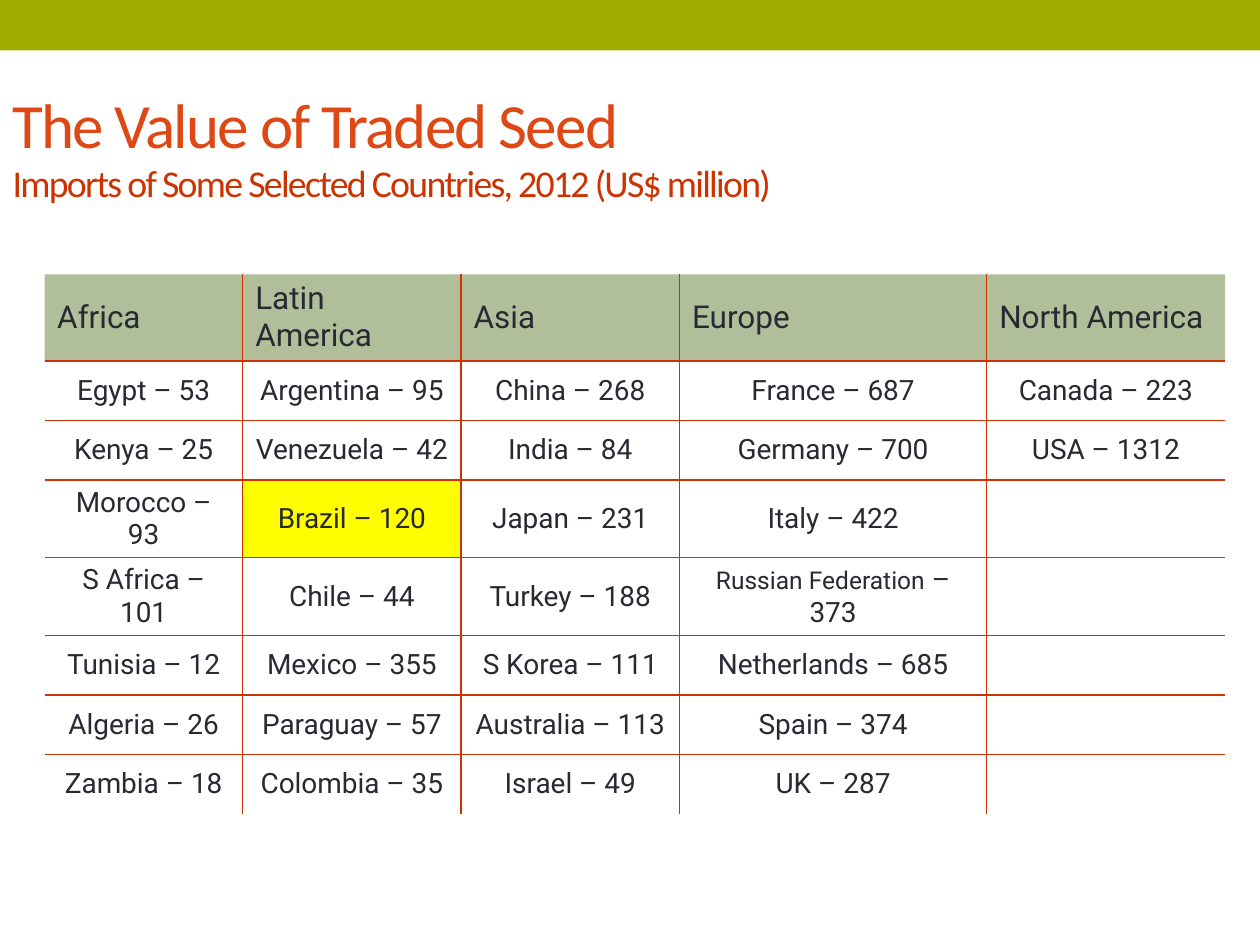
from lxml.etree import SubElement
from pptx import Presentation
from pptx.dml.color import RGBColor
from pptx.enum.shapes import MSO_SHAPE as Shape
from pptx.enum.text import MSO_ANCHOR as Anchor, MSO_AUTO_SIZE as AutoSize, PP_ALIGN as Align
from pptx.oxml.ns import qn
from pptx.util import Pt

HEADINGS = ["Africa", "Latin America", "Asia", "Europe", "North America"]
IMPORTS = [
    ["Egypt – 53", "Argentina – 95", "China – 268", "France – 687", "Canada – 223"],
    ["Kenya – 25", "Venezuela – 42", "India – 84", "Germany – 700", "USA – 1312"],
    ["Morocco – 93", "Brazil – 120", "Japan – 231", "Italy – 422", ""],
    ["S Africa – 101", "Chile – 44", "Turkey – 188", "Russian Federation – 373", ""],
    ["Tunisia – 12", "Mexico – 355", "S Korea – 111", "Netherlands – 685", ""],
    ["Algeria – 26", "Paraguay – 57", "Australia – 113", "Spain – 374", ""],
    ["Zambia – 18", "Colombia – 35", "Israel – 49", "UK – 287", ""],
]
COLUMN_WIDTHS = [113.2, 124.8, 124.8, 175.6, 136.2]
HEADER_HEIGHT, ROW_HEIGHT = 28.8, 34


def rgb(value):
    return RGBColor.from_string(value)


class SeedSlide:
    band, title, rule, ink = "A2AD00", "DD4814", "CC3300", "292934"
    header, highlight = "637F35", "FFFF00"
    title_font, table_font = "Calibri", "Roboto"

    def __init__(self, slide):
        self.slide = slide

    def add_run(self, paragraph, text, font, size, color):
        run = paragraph.add_run()
        run.text = text
        run.font.name, run.font.size = font, Pt(size)
        run.font.color.rgb = rgb(color)
        return run

    def add_band(self, width, height):
        band = self.slide.shapes.add_shape(Shape.RECTANGLE, 0, 0, Pt(width), Pt(height))
        band.shadow.inherit = False
        band.fill.solid()
        band.fill.fore_color.rgb = rgb(self.band)
        band.line.fill.background()

    def add_title(self, heading, subheading):
        holder = self.slide.shapes.title
        holder.left, holder.top = Pt(0), Pt(45.4)
        holder.width, holder.height = Pt(720), Pt(79.2)
        frame = holder.text_frame
        frame.auto_size, frame.word_wrap = AutoSize.NONE, True
        frame.vertical_anchor = Anchor.MIDDLE
        paragraph = frame.paragraphs[0]
        paragraph.alignment, paragraph.line_spacing = Align.LEFT, 0.95
        top = self.add_run(paragraph, heading, self.title_font, 36, self.title)
        paragraph.add_line_break()
        below = self.add_run(paragraph, subheading, self.title_font, 21.6, self.rule)
        for run in (top, below):
            run.font._element.set("spc", "-100")

    def set_borders(self, cell, edges):
        """Rule the sides named in edges (L, R, T, B) and clear the others."""
        properties = cell._tc.get_or_add_tcPr()
        for side in "LRTB":
            line = SubElement(properties, qn(f"a:ln{side}"), w=str(Pt(1)))
            if side in edges:
                fill = SubElement(line, qn("a:solidFill"))
                SubElement(fill, qn("a:srgbClr"), val=self.rule)
            else:
                SubElement(line, qn("a:noFill"))

    def fill_cell(self, cell, color=None, alpha=None):
        if color is None:
            cell.fill.background()
            return
        cell.fill.solid()
        cell.fill.fore_color.rgb = rgb(color)
        if alpha:
            tint = cell._tc.tcPr.find(f"{qn('a:solidFill')}/{qn('a:srgbClr')}")
            SubElement(tint, qn("a:alpha"), val=str(alpha * 1000))

    def write_cell(self, cell, text, is_header):
        cell.vertical_anchor = Anchor.MIDDLE
        cell.margin_left = cell.margin_right = Pt(7.2)
        cell.margin_top = cell.margin_bottom = Pt(3.6)
        paragraph = cell.text_frame.paragraphs[0]
        paragraph.alignment = Align.LEFT if is_header else Align.CENTER
        size = 18 if is_header else 16
        if text.startswith("Russian"):
            country, value = text.split(" – ")
            self.add_run(paragraph, country, self.table_font, 14, self.ink)
            text = f" – {value}"
        if text:
            self.add_run(paragraph, text, self.table_font, size, self.ink)

    def add_table(self, rows, left, top):
        height = HEADER_HEIGHT + ROW_HEIGHT * (len(rows) - 1)
        table = self.slide.shapes.add_table(
            len(rows), len(COLUMN_WIDTHS), Pt(left), Pt(top),
            Pt(sum(COLUMN_WIDTHS)), Pt(height)).table
        table.first_row = table.horz_banding = False
        for column, width in zip(table.columns, COLUMN_WIDTHS):
            column.width = Pt(width)
        last_row, last_column = len(rows) - 1, len(COLUMN_WIDTHS) - 1
        for r, texts in enumerate(rows):
            table.rows[r].height = Pt(ROW_HEIGHT if r else HEADER_HEIGHT)
            for c, text in enumerate(texts):
                cell = table.cell(r, c)
                inner = {"L": c > 0, "R": c < last_column, "T": r > 0, "B": r < last_row}
                self.set_borders(cell, [side for side, ruled in inner.items() if ruled])
                if r == 0:
                    self.fill_cell(cell, self.header, alpha=50)
                else:
                    self.fill_cell(cell, self.highlight if text.startswith("Brazil") else None)
                self.write_cell(cell, text, is_header=r == 0)


def main():
    deck = Presentation()
    deck.slide_width, deck.slide_height = Pt(720), Pt(540)
    title_only = deck.slide_layouts[5]
    page = SeedSlide(deck.slides.add_slide(title_only))
    page.add_band(720, 28.8)
    page.add_title("The Value of Traded Seed",
                   "Imports of Some Selected Countries, 2012 (US$ million)")
    page.add_table([HEADINGS] + IMPORTS, 25.5, 156.8)
    deck.save("out.pptx")


if __name__ == "__main__":
    main()
